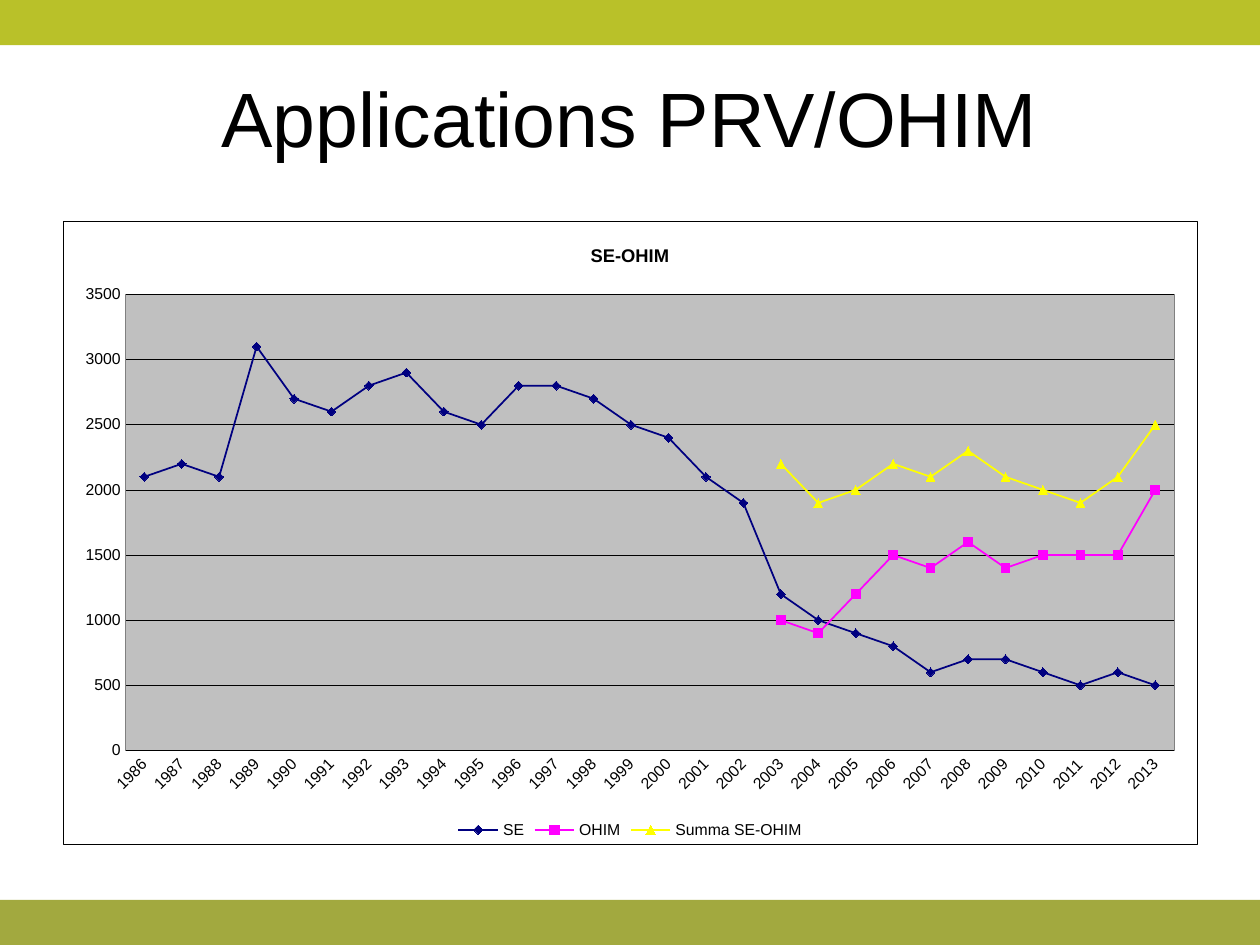
import pptx
import pptx.chart.data
import pptx.dml.color
import pptx.enum.chart
import pptx.enum.shapes
import pptx.enum.text
import pptx.oxml
import pptx.oxml.ns
import pptx.util

RGBColor = pptx.dml.color.RGBColor
Cm = pptx.util.Cm
Pt = pptx.util.Pt
qn = pptx.oxml.ns.qn

BLACK = RGBColor(0x00, 0x00, 0x00)
WHITE = RGBColor(0xFF, 0xFF, 0xFF)
SILVER = RGBColor(0xC0, 0xC0, 0xC0)
GREY = RGBColor(0x80, 0x80, 0x80)
LIME = RGBColor(0xB9, 0xC1, 0x29)
OLIVE = RGBColor(0xA2, 0xA9, 0x3F)
NAVY = RGBColor(0x00, 0x00, 0x80)
MAGENTA = RGBColor(0xFF, 0x00, 0xFF)
YELLOW = RGBColor(0xFF, 0xFF, 0x00)

FONT = "Arial"
HAIRLINE = Pt(0.25)
YEARS = range(1986, 2014)
MARKER = pptx.enum.chart.XL_MARKER_STYLE
APPLICATIONS = [
    ("SE", NAVY, MARKER.DIAMOND,
     [2100, 2200, 2100, 3100, 2700, 2600, 2800, 2900, 2600, 2500,
      2800, 2800, 2700, 2500, 2400, 2100, 1900, 1200, 1000, 900,
      800, 600, 700, 700, 600, 500, 600, 500]),
    ("OHIM", MAGENTA, MARKER.SQUARE,
     [1000, 900, 1200, 1500, 1400, 1600, 1400, 1500, 1500, 1500, 2000]),
    ("Summa SE-OHIM", YELLOW, MARKER.TRIANGLE,
     [2200, 1900, 2000, 2200, 2100, 2300, 2100, 2000, 1900, 2100, 2500]),
]


def format_font(font, size, bold=False, color=BLACK):
    font.name = FONT
    font.size = Pt(size)
    font.bold = bold
    font.color.rgb = color


def write_text(frame, text, align=pptx.enum.text.PP_ALIGN.CENTER, **font_format):
    paragraph = frame.paragraphs[0]
    paragraph.alignment = align
    run = paragraph.add_run()
    run.text = text
    format_font(run.font, **font_format)


def format_line(line, color, width=HAIRLINE):
    line.color.rgb = color
    line.width = width


def area_style(fill, border):
    return pptx.oxml.parse_xml(
        f'<c:spPr {pptx.oxml.ns.nsdecls("c", "a")}>'
        f'<a:solidFill><a:srgbClr val="{fill}"/></a:solidFill>'
        f'<a:ln w="{HAIRLINE}"><a:solidFill><a:srgbClr val="{border}"/>'
        '</a:solidFill></a:ln></c:spPr>')


def inner_layout(**fractions):
    values = "".join(f'<c:{key} val="{value}"/>' for key, value in fractions.items())
    return pptx.oxml.parse_xml(
        f'<c:layout {pptx.oxml.ns.nsdecls("c")}><c:manualLayout>'
        '<c:layoutTarget val="inner"/><c:xMode val="edge"/><c:yMode val="edge"/>'
        f'{values}</c:manualLayout></c:layout>')


class SlideBuilder:
    def __init__(self, presentation):
        self.slide = presentation.slides.add_slide(presentation.slide_layouts[5])

    def bar(self, top, color):
        band = self.slide.shapes.add_shape(
            pptx.enum.shapes.MSO_SHAPE.RECTANGLE, 0, Cm(top), Cm(25.4), Cm(0.91))
        band.shadow.inherit = False
        band.fill.solid()
        band.fill.fore_color.rgb = color
        band.line.fill.background()

    def title(self, text):
        heading = self.slide.shapes.title
        heading.left, heading.top = Cm(1.27), Cm(0.76)
        heading.width, heading.height = Cm(22.86), Cm(3.18)
        heading.text_frame.vertical_anchor = pptx.enum.text.MSO_ANCHOR.MIDDLE
        write_text(heading.text_frame, text, size=44)

    def line_chart(self, title, years, lines):
        trend_data = pptx.chart.data.CategoryChartData()
        trend_data.categories = [str(year) for year in years]
        for name, _, _, values in lines:
            missing = [None] * (len(years) - len(values))
            trend_data.add_series(name, missing + values)
        trend = self.slide.shapes.add_chart(
            pptx.enum.chart.XL_CHART_TYPE.LINE_MARKERS,
            Cm(1.27), Cm(4.45), Cm(22.86), Cm(12.57), trend_data).chart
        format_font(trend.font, 9)
        trend.has_title = True
        write_text(trend.chart_title.text_frame, title, size=10.5, bold=True)
        trend.has_legend = True
        trend.legend.position = pptx.enum.chart.XL_LEGEND_POSITION.BOTTOM
        trend.legend.include_in_layout = False
        format_font(trend.legend.font, 9)
        trend.plots[0].vary_by_categories = False
        for series, (_, color, symbol, _) in zip(trend.plots[0].series, lines):
            series.smooth = False
            format_line(series.format.line, color, Pt(1))
            series.marker.style = symbol
            series.marker.size = 5
            series.marker.format.fill.solid()
            series.marker.format.fill.fore_color.rgb = color
            format_line(series.marker.format.line, color)
        self.axes(trend)
        self.areas(trend)

    def axes(self, trend):
        for axis in (trend.category_axis, trend.value_axis):
            axis.major_tick_mark = pptx.enum.chart.XL_TICK_MARK.NONE
            axis.minor_tick_mark = pptx.enum.chart.XL_TICK_MARK.NONE
            format_font(axis.tick_labels.font, 9)
        year_axis, count_axis = trend.category_axis, trend.value_axis
        format_line(year_axis.format.line, BLACK)
        label_body = year_axis._element.find(qn("c:txPr")).find(qn("a:bodyPr"))
        label_body.set("rot", "-2700000")
        label_body.set("vert", "horz")
        count_axis.minimum_scale = 0
        count_axis.maximum_scale = 3500
        count_axis.major_unit = 500
        count_axis.format.line.fill.background()
        count_axis.has_major_gridlines = True
        format_line(count_axis.major_gridlines.format.line, BLACK)

    def areas(self, trend):
        chart_xml = trend._chartSpace.find(qn("c:chart"))
        chart_xml.addnext(area_style(WHITE, BLACK))
        plot_area = chart_xml.find(qn("c:plotArea"))
        for automatic in plot_area.findall(qn("c:layout")):
            plot_area.remove(automatic)
        plot_area.insert(0, inner_layout(x=0.055, y=0.118, w=0.925, h=0.732))
        plot_area.append(area_style(SILVER, GREY))


def main():
    presentation = pptx.Presentation()
    presentation.slide_width = Cm(25.4)
    presentation.slide_height = Cm(19.05)
    builder = SlideBuilder(presentation)
    builder.bar(0, LIME)
    builder.bar(18.14, OLIVE)
    builder.title("Applications PRV/OHIM")
    builder.line_chart("SE-OHIM", YEARS, APPLICATIONS)
    presentation.save("out.pptx")


if __name__ == "__main__":
    main()
